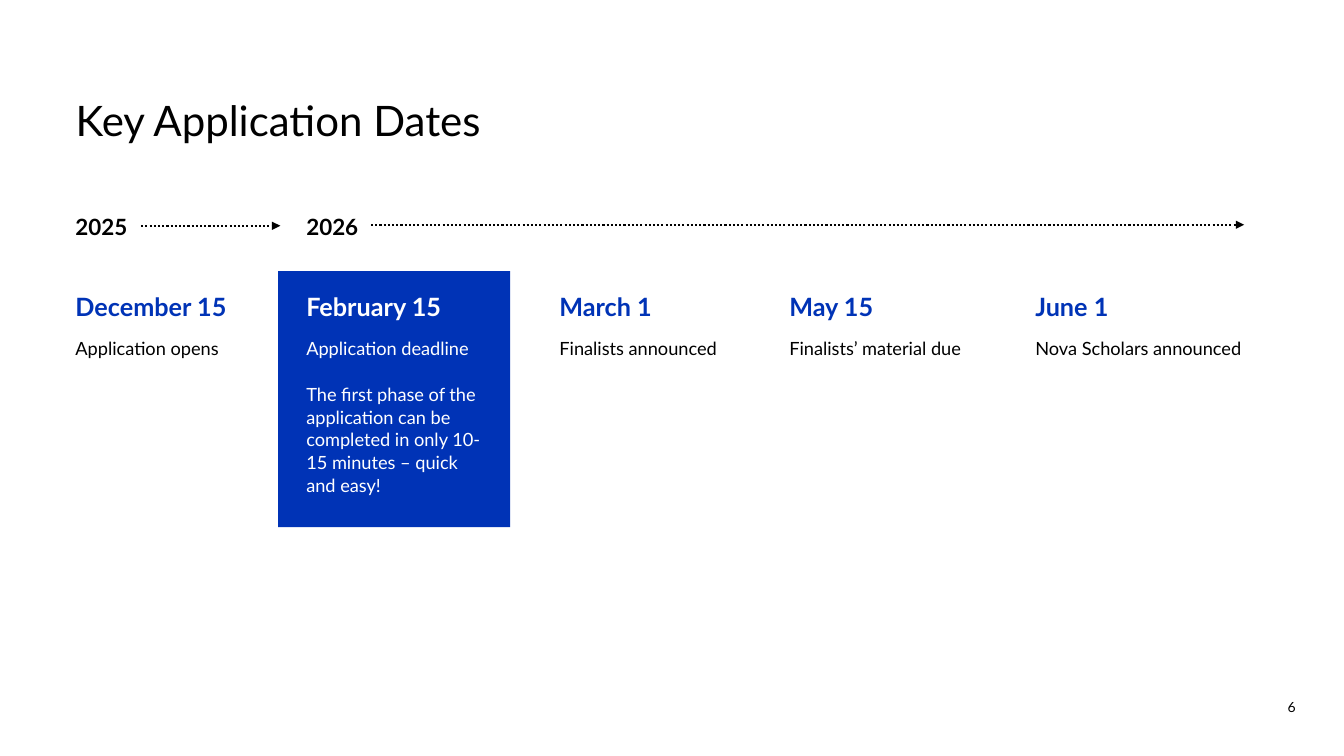
from lxml.etree import SubElement
from pptx import Presentation
from pptx.dml.color import RGBColor
from pptx.enum.dml import MSO_LINE
from pptx.enum.shapes import MSO_CONNECTOR, MSO_SHAPE
from pptx.enum.text import MSO_ANCHOR, MSO_AUTO_SIZE, PP_ALIGN
from pptx.oxml.ns import qn
from pptx.util import Inches, Pt

BLUE, BLACK, WHITE = "0033B6", "000000", "FFFFFF"


def rgb(value):
    return RGBColor.from_string(value)


def line(text, size, color=BLACK, bold=False, **fmt):
    return text, {"size": Pt(size), "bold": bold}, color, fmt


class SlideBuilder:
    font = "Lato"

    def __init__(self, prs):
        self.s = prs.slides.add_slide(prs.slide_layouts[5])

    def fill_text(self, sp, lines, anchor=MSO_ANCHOR.TOP):
        tf = sp.text_frame
        frame = {"word_wrap": True, "auto_size": MSO_AUTO_SIZE.NONE,
                 "vertical_anchor": anchor}
        for name, value in frame.items():
            setattr(tf, name, value)
        for i, (text, font, color, fmt) in enumerate(lines):
            p = tf.add_paragraph() if i else tf.paragraphs[0]
            for name, value in fmt.items():
                setattr(p, name, value)
            r = p.add_run()
            r.text = text
            for name, value in {"name": self.font, **font}.items():
                setattr(r.font, name, value)
            r.font.color.rgb = rgb(color)

    def title(self, text, *box):
        sp = self.s.shapes.title
        for name, value in zip(("left", "top", "width", "height"), box):
            setattr(sp, name, Inches(value))
        self.fill_text(sp, [line(text, 30, alignment=PP_ALIGN.LEFT)])

    def text(self, lines, *box, anchor=MSO_ANCHOR.TOP):
        sp = self.s.shapes.add_textbox(*map(Inches, box))
        self.fill_text(sp, lines, anchor)

    def panel(self, color, *box):
        sp = self.s.shapes.add_shape(MSO_SHAPE.RECTANGLE, *map(Inches, box))
        sp.shadow.inherit = False
        sp.fill.solid()
        sp.fill.fore_color.rgb = rgb(color)
        sp.line.fill.background()

    def arrow(self, x1, x2, y):
        sp = self.s.shapes.add_connector(
            MSO_CONNECTOR.STRAIGHT, *map(Inches, (x1, y, x2, y)))
        sp.line.color.rgb = rgb(BLACK)
        sp.line.width = Pt(1.5)
        sp.line.dash_style = MSO_LINE.ROUND_DOT
        SubElement(sp.line._ln, qn("a:tailEnd"), type="triangle")
        SubElement(sp._element.spPr, qn("a:effectLst"))


def main():
    prs = Presentation()
    prs.slide_width, prs.slide_height = Inches(13.33), Inches(7.5)
    b = SlideBuilder(prs)
    b.panel(BLUE, 2.76, 2.69, 2.3, 2.54)
    b.title("Key Application Dates", 0.65, 0.89, 12.03, 1.1)

    milestones = [
        (0.65, "December 15", "Application opens"),
        (2.94, "February 15", "Application deadline"),
        (5.45, "March 1", "Finalists announced"),
        (7.73, "May 15", "Finalists’ material due"),
        (10.17, "June 1", "Nova Scholars announced"),
    ]
    deadline_note = ("The first phase of the application can be completed "
                     "in only 10-15 minutes – quick and easy!")
    for x, date, event in milestones:
        deadline = date == "February 15"
        date_color, event_color = (WHITE, WHITE) if deadline else (BLUE, BLACK)
        lines = [
            line(date, 18, date_color, True, line_spacing=1.05),
            line(event, 13, event_color, line_spacing=1.05, space_before=Pt(10)),
        ]
        if deadline:
            lines.append(line(deadline_note, 13, WHITE, line_spacing=1.05,
                              space_before=Pt(16.4)))
        width, height = (1.97, 2.83) if deadline else (2.68, 1.09)
        b.text(lines, x, 2.83, width, height)

    for year, x, width in (("2025", 0.65, 1.47), ("2026", 2.94, 2.68)):
        b.text([line(year, 16, bold=True, line_spacing=0.95)],
               x, 2.08, width, 0.36)
    b.arrow(1.4, 2.78, 2.24)
    b.arrow(3.68, 12.34, 2.23)
    b.text([line("6", 10, alignment=PP_ALIGN.RIGHT)],
           11.95, 6.81, 1, 0.4, anchor=MSO_ANCHOR.MIDDLE)
    prs.save("out.pptx")


if __name__ == "__main__":
    main()
